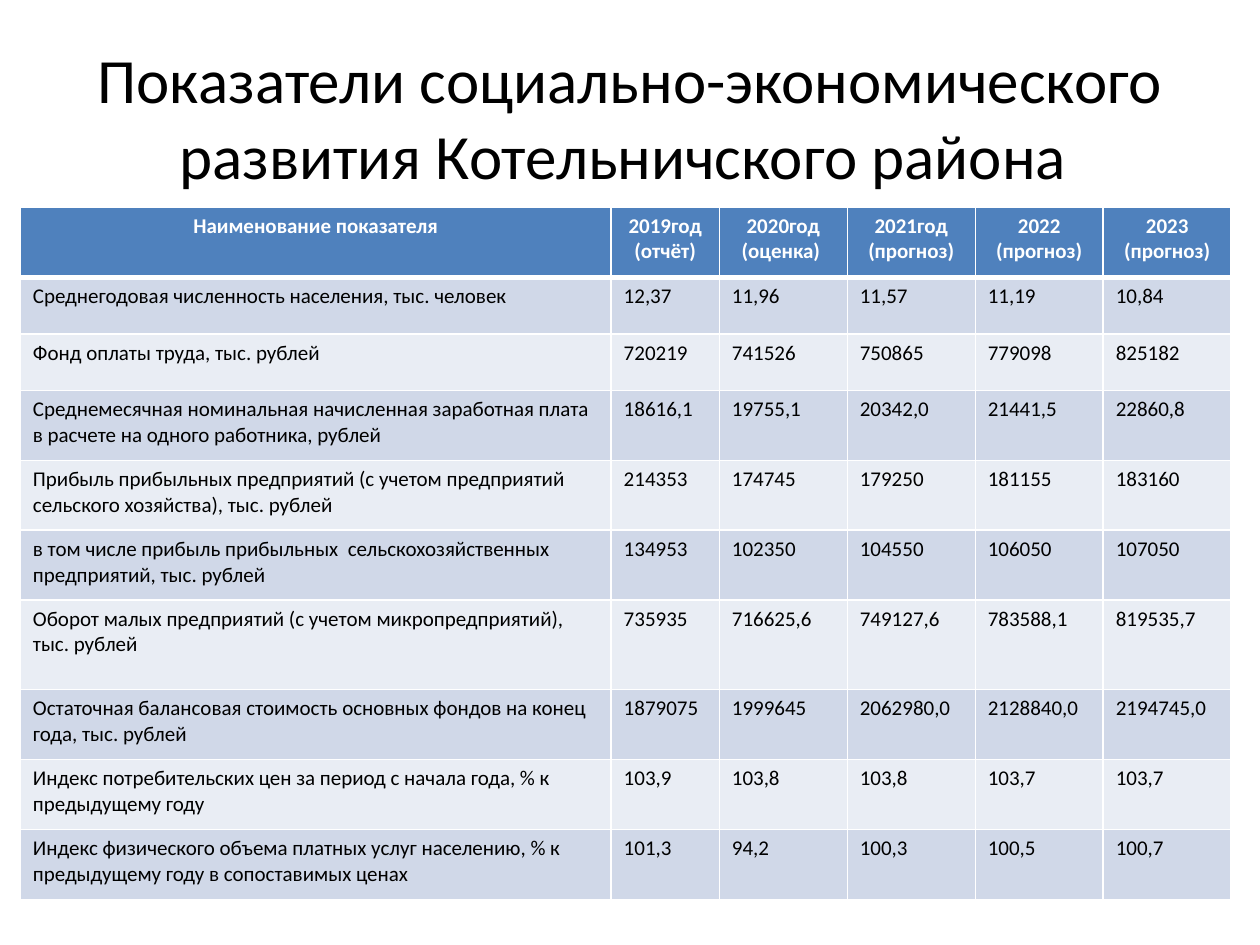
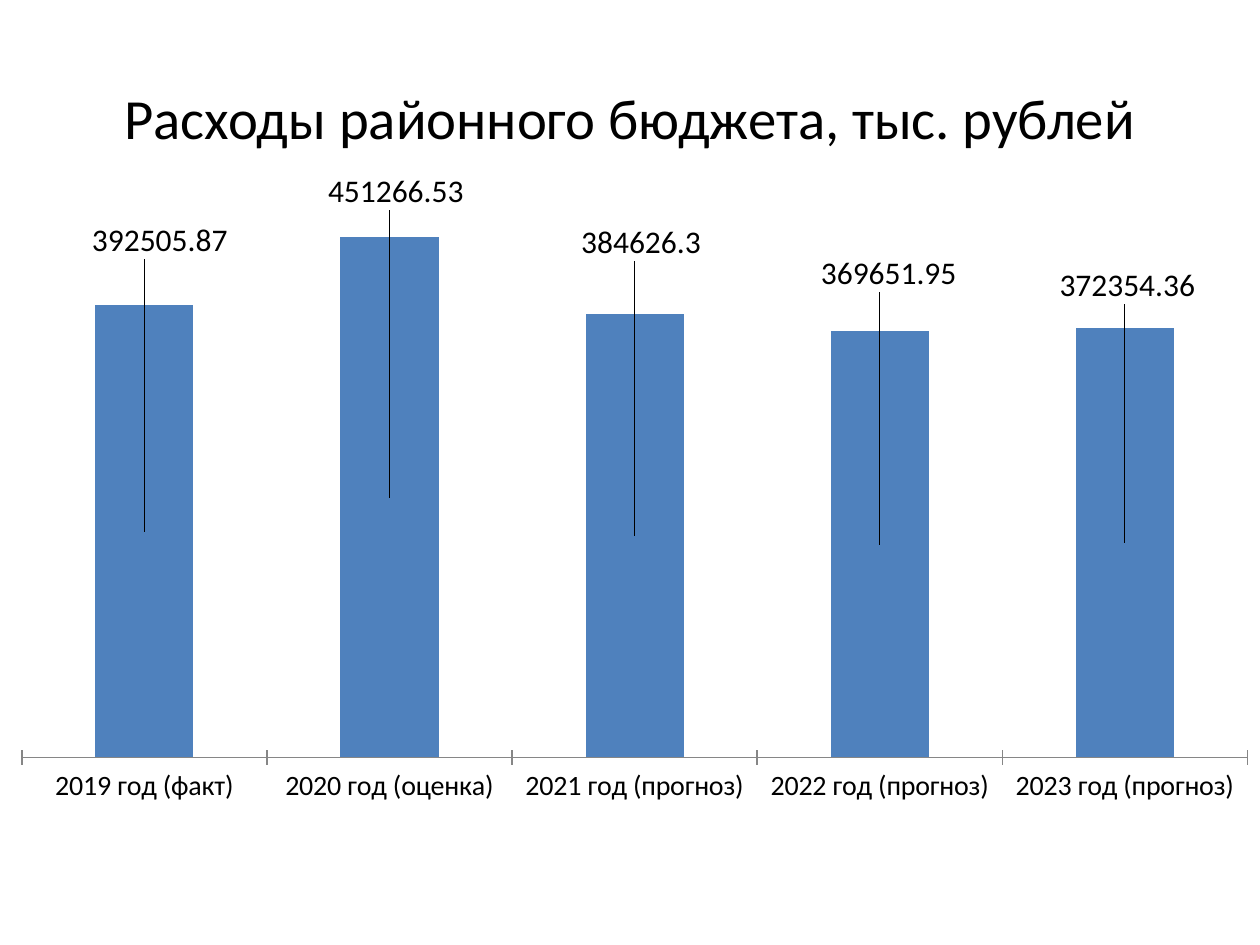
"""Build two slides on the district: a table of indicators and a chart of budget spending."""
from dataclasses import dataclass

from lxml import etree
from pptx import Presentation
from pptx import util as u
from pptx.chart.data import CategoryChartData
from pptx.dml.color import RGBColor
from pptx.enum import chart as ch, text
from pptx.oxml import ns, parse_xml


@dataclass(frozen=True)
class Theme:
    font: str = "Calibri"
    ink: str = "000000"
    paper: str = "FFFFFF"
    accent: str = "4F81BD"
    axis: str = "868686"
    bands: tuple = ("D0D8E8", "E9EDF4")
    table_size: float = 12
    label_size: float = 18
    category_size: float = 16


THEME = Theme()
TITLE_BOX = (1.27, 0.76, 22.86, 3.18)

INDICATORS_TITLE = "Показатели социально-экономического развития Котельничского района "
HEADINGS = ("Наименование показателя", "2019год (отчёт)", "2020год (оценка) ",
            "2021год (прогноз)", "2022\n(прогноз)", "2023\n(прогноз)")
INDICATORS = [
    ("Среднегодовая численность населения, тыс. человек",
     "12,37", "11,96", "11,57", "11,19", "10,84"),
    ("Фонд оплаты труда, тыс. рублей",
     "720219", "741526", "750865", "779098", "825182"),
    ("Среднемесячная номинальная начисленная заработная плата в расчете на одного работника, рублей",
     "18616,1", "19755,1", "20342,0", "21441,5", "22860,8"),
    ("Прибыль прибыльных предприятий (с учетом предприятий сельского хозяйства), тыс. рублей",
     "214353", "174745", "179250", "181155", "183160"),
    ("в том числе прибыль прибыльных  сельскохозяйственных предприятий, тыс. рублей",
     "134953", "102350", "104550", "106050", "107050"),
    ("Оборот малых предприятий (с учетом микропредприятий), тыс. рублей",
     "735935", "716625,6", "749127,6", "783588,1", "819535,7"),
    ("Остаточная балансовая стоимость основных фондов на конец года, тыс. рублей",
     "1879075", "1999645", "2062980,0", "2128840,0", "2194745,0"),
    ("Индекс потребительских цен за период с начала года, % к предыдущему году",
     "103,9", "103,8", "103,8", "103,7", "103,7"),
    ("Индекс физического объема платных услуг населению, % к предыдущему году в сопоставимых ценах",
     "101,3", "94,2", "100,3", "100,5", "100,7"),
]
INDICATORS_AT = (0.41, 4.17)
COLUMN_WIDTHS = (11.91, 2.18) + (2.58,) * 4
ROW_HEIGHTS = (1.42, 1.14, 1.14, 1.41, 1.41, 1.41, 1.8, 1.41, 1.41, 1.41)

SPENDING_TITLE = "Расходы районного бюджета, тыс. рублей"
SPENDING = {
    "2019 год (факт)": 392505.87,
    "2020 год (оценка)": 451266.53,
    "2021 год (прогноз)": 384626.3,
    "2022 год (прогноз)": 369651.95,
    "2023 год (прогноз)": 372354.36,
}
SPENDING_BOX = (0, 2.77, 25.98, 15.47)
SPENDING_MAX = 500000
PLOT_PERCENT = {"x": 1.7, "y": 5.7, "w": 95.1, "h": 75.1}
LABEL_SHIFT_PERCENT = [(1.2, -37.9), (0.5, -39.9), (0.5, -38.2), (0.7, -35.3), (0.2, -33.6)]


def cm(lengths):
    return [u.Cm(length) for length in lengths]


def style_font(font, size, color=THEME.ink, bold=False):
    font.name, font.size, font.bold = THEME.font, u.Pt(size), bold
    font.color.rgb = RGBColor.from_string(color)


def style_paragraphs(frame, size, color=THEME.ink, bold=False, align=None):
    for paragraph in frame.paragraphs:
        paragraph.alignment = align
        for run in paragraph.runs:
            style_font(run.font, size, color, bold)


def titled_slide(deck, wording, size):
    slide = deck.slides.add_slide(deck.slide_layouts[5])
    title = slide.shapes.title
    title.left, title.top, title.width, title.height = cm(TITLE_BOX)
    frame = title.text_frame
    frame.text = wording
    frame.word_wrap = True
    frame.auto_size = text.MSO_AUTO_SIZE.NONE
    frame.vertical_anchor = text.MSO_ANCHOR.MIDDLE
    style_paragraphs(frame, size, align=text.PP_ALIGN.CENTER)
    return slide


def border_cell(cell, is_heading, below_heading):
    properties = cell._tc.get_or_add_tcPr()
    widths = {"lnL": 1, "lnR": 1, "lnT": 3 if below_heading else 1, "lnB": 3 if is_heading else 1}
    for side, width in widths.items():
        edge = etree.SubElement(properties, ns.qn("a:" + side), w=str(u.Pt(width)))
        fill = etree.SubElement(edge, ns.qn("a:solidFill"))
        etree.SubElement(fill, ns.qn("a:srgbClr"), val=THEME.paper)


def add_indicators(slide):
    rows = [HEADINGS, *INDICATORS]
    size = (sum(COLUMN_WIDTHS), sum(ROW_HEIGHTS))
    table = slide.shapes.add_table(len(rows), len(HEADINGS), *cm(INDICATORS_AT + size)).table
    for column, width in zip(table.columns, COLUMN_WIDTHS):
        column.width = u.Cm(width)
    for r, (row, height) in enumerate(zip(rows, ROW_HEIGHTS)):
        table.rows[r].height = u.Cm(height)
        heading = r == 0
        band = THEME.accent if heading else THEME.bands[(r - 1) % 2]
        for c, wording in enumerate(row):
            cell = table.cell(r, c)
            cell.text_frame.text = wording
            style_paragraphs(cell.text_frame, THEME.table_size,
                             THEME.paper if heading else THEME.ink, heading,
                             text.PP_ALIGN.CENTER if heading else text.PP_ALIGN.LEFT)
            border_cell(cell, heading, r == 1)
            cell.fill.solid()
            cell.fill.fore_color.rgb = RGBColor.from_string(band)


def manual_layout(percents, inner=False):
    target = '<c:layoutTarget val="inner"/>' if inner else ""
    modes = '<c:xMode val="edge"/><c:yMode val="edge"/>' if inner else ""
    places = "".join(f'<c:{key} val="{value / 100:.3f}"/>' for key, value in percents.items())
    return parse_xml(f'<c:layout {ns.nsdecls("c")}><c:manualLayout>{target}{modes}{places}'
                     "</c:manualLayout></c:layout>")


def add_spending(slide):
    data = CategoryChartData()
    data.categories = list(SPENDING)
    data.add_series("Series 1", list(SPENDING.values()))
    chart = slide.shapes.add_chart(ch.XL_CHART_TYPE.COLUMN_STACKED, *cm(SPENDING_BOX), data).chart
    chart.has_legend = chart.has_title = False
    style_font(chart.font, THEME.label_size)

    plot = chart.plots[0]
    plot.gap_width, plot.overlap, plot.vary_by_categories = 150, 100, False
    plot_area = chart._chartSpace.chart.plotArea
    for layout in plot_area.findall(ns.qn("c:layout")):
        plot_area.remove(layout)
    plot_area.insert(0, manual_layout(PLOT_PERCENT, inner=True))

    values = chart.value_axis
    values.minimum_scale, values.maximum_scale = 0, SPENDING_MAX
    values.has_major_gridlines = values.visible = False
    years = chart.category_axis
    years.major_tick_mark = ch.XL_TICK_MARK.CROSS
    years.format.line.color.rgb = RGBColor.from_string(THEME.axis)
    style_font(years.tick_labels.font, THEME.category_size)

    spending = plot.series[0]
    spending.format.fill.solid()
    spending.format.fill.fore_color.rgb = RGBColor.from_string(THEME.accent)
    spending.data_labels.show_value = True
    style_font(spending.data_labels.font, THEME.label_size)
    for i in range(len(SPENDING)):
        style_font(spending.points[i].data_label.font, THEME.label_size)
    for label, (x, y) in zip(spending._element.xpath("c:dLbls/c:dLbl"), LABEL_SHIFT_PERCENT):
        label.insert(1, manual_layout({"x": x, "y": y}))


def main():
    deck = Presentation()
    deck.slide_width, deck.slide_height = cm((25.4, 19.05))
    add_indicators(titled_slide(deck, INDICATORS_TITLE, 36))
    add_spending(titled_slide(deck, SPENDING_TITLE, 32.4))
    deck.save("out.pptx")


if __name__ == "__main__":
    main()
